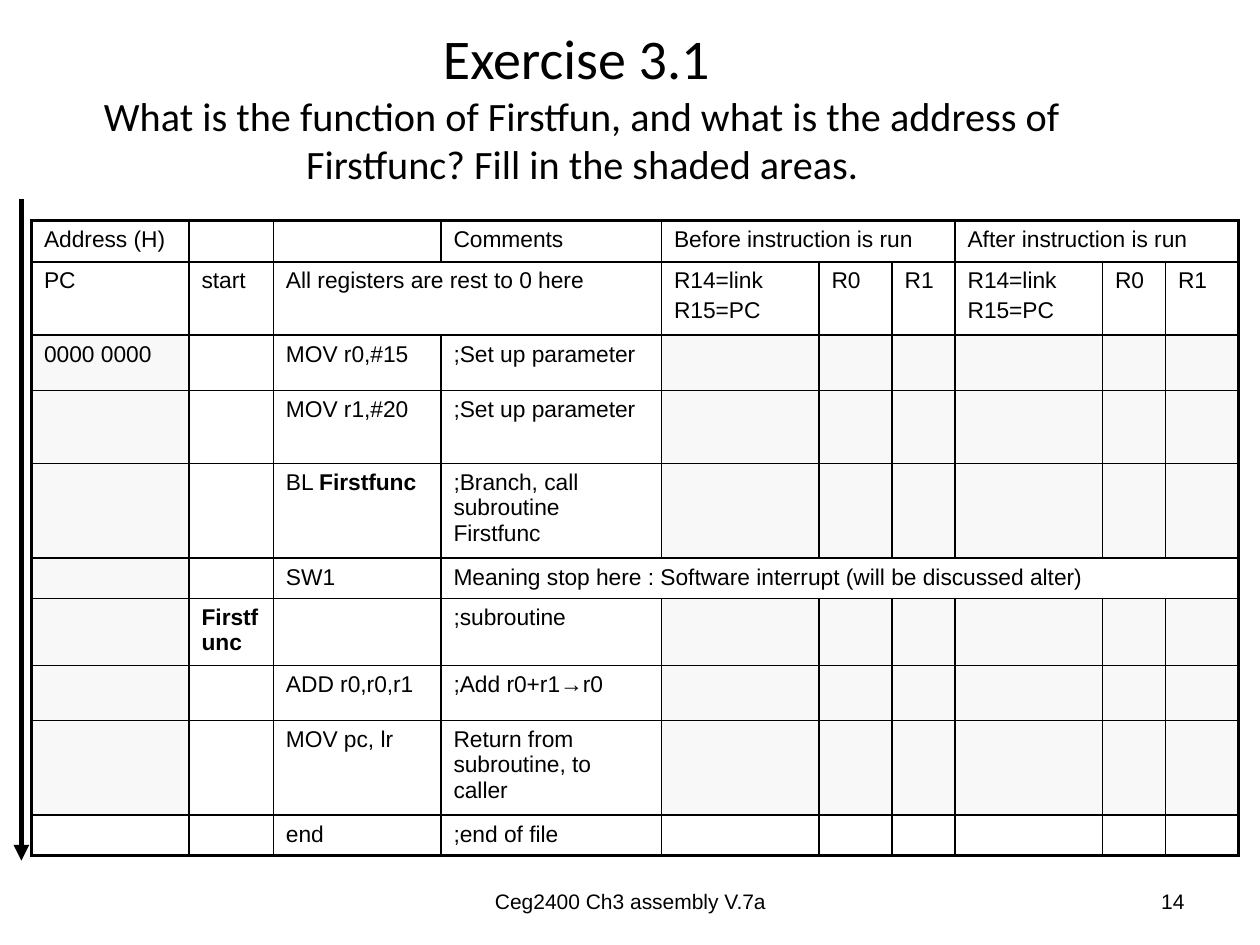
import pptx
import pptx.dml.color
import pptx.enum.shapes
import pptx.enum.text
import pptx.oxml.ns
import pptx.util
from lxml import etree
from pptx.util import Inches

BLACK, WHITE, SHADE = "000000", "FFFFFF", "F8F8F8"
CENTER = pptx.enum.text.PP_ALIGN.CENTER
RIGHT = pptx.enum.text.PP_ALIGN.RIGHT
MIDDLE = pptx.enum.text.MSO_ANCHOR.MIDDLE

COLUMN_WIDTHS = [1.25, 0.67, 1.33, 1.75, 1.25, 0.58, 0.5, 1.17, 0.5, 0.58]
ROW_HEIGHTS = [0.33, 0.58, 0.44, 0.58, 0.75, 0.32, 0.53, 0.44, 0.75, 0.32]
REGISTERS = ["R14=link\nR15=PC", "R0", "R1"]
# Text between ** marks is bold; trailing empty cells are left out.
PROGRAM = [
    ["Address (H)", "", "", "Comments", "Before instruction is run", "", "",
     "After instruction is run"],
    ["PC", "start", "All registers are rest to 0 here", ""] + REGISTERS * 2,
    ["0000 0000", "", "MOV r0,#15", ";Set up parameter"],
    ["", "", "MOV r1,#20", ";Set up parameter"],
    ["", "", "BL **Firstfunc**", ";Branch, call subroutine Firstfunc"],
    ["", "", "SW1",
     "Meaning stop here : Software interrupt (will be discussed alter)"],
    ["", "**Firstfunc**", "", ";subroutine"],
    ["", "", "ADD r0,r0,r1", ";Add r0+r1→r0"],
    ["", "", "MOV pc, lr", "Return from subroutine, to caller"],
    ["", "", "end", ";end of file"],
]
SPANS = {(0, 4): 3, (0, 7): 3, (1, 2): 2, (5, 3): 7}
SHADED_ROWS = range(2, 9)
ANSWER_COLUMNS = [0, 4, 5, 6, 7, 8, 9]


def color(hex_code):
    return pptx.dml.color.RGBColor.from_string(hex_code)


def add_xml(parent, tag, **attributes):
    return etree.SubElement(parent, pptx.oxml.ns.qn(tag), **attributes)


def style_run(run, size, font="Arial", bold=False):
    run.font.size = pptx.util.Pt(size)
    run.font.name = font
    run.font.bold = bold
    run.font.color.rgb = color(BLACK)


def add_title(slide):
    title = slide.shapes.title
    title.left, title.top = Inches(0.5), Inches(0.13)
    title.width, title.height = Inches(8.25), Inches(1.42)
    frame = title.text_frame
    frame.text = ("Exercise 3.1 \vWhat is the function of Firstfun, and what is "
                  "the address of Firstfunc? Fill in the shaded areas.")
    frame.auto_size = pptx.enum.text.MSO_AUTO_SIZE.NONE
    frame.vertical_anchor = MIDDLE
    heading = frame.paragraphs[0]
    heading.alignment = CENTER
    for run, size in zip(heading.runs, (32, 23)):
        style_run(run, size, "Calibri")
    line_break = heading._p.find(pptx.oxml.ns.qn("a:br"))
    add_xml(line_break, "a:rPr", sz="3200")


def set_borders(cell, row, column, span):
    """Draw thin lines inside the table and thick ones around it."""
    outer = {
        "a:lnL": column == 0,
        "a:lnR": column + span == len(COLUMN_WIDTHS),
        "a:lnT": row == 0,
        "a:lnB": row == len(ROW_HEIGHTS) - 1,
    }
    properties = cell._tc.get_or_add_tcPr()
    for tag, is_outer in outer.items():
        width = pptx.util.Pt(2.25 if is_outer else 1)
        line = add_xml(properties, tag, w=str(int(width)))
        add_xml(add_xml(line, "a:solidFill"), "a:srgbClr", val=BLACK)


def set_cell_text(cell, text):
    cell.margin_left = cell.margin_right = Inches(0.1)
    cell.margin_top = cell.margin_bottom = Inches(0.05)
    if not text:
        # Keeps an empty cell from forcing its row taller.
        add_xml(cell.text_frame.paragraphs[0]._p, "a:endParaRPr", sz="1300")
        return
    cell.text_frame.text = text.replace("**", "")
    for index, paragraph in enumerate(cell.text_frame.paragraphs):
        if index:
            paragraph.space_before = pptx.util.Pt(2.6)
        if "**" in text:
            paragraph.clear()
            for part, words in enumerate(text.split("**")):
                if words:
                    run = paragraph.add_run()
                    run.text = words
                    style_run(run, 13, bold=part % 2 == 1)
        else:
            for run in paragraph.runs:
                style_run(run, 13)


def add_program_table(slide):
    table = slide.shapes.add_table(
        len(ROW_HEIGHTS), len(COLUMN_WIDTHS), Inches(0.25), Inches(1.75),
        Inches(sum(COLUMN_WIDTHS)), Inches(sum(ROW_HEIGHTS))).table
    table.first_row = table.horz_banding = False
    for column, width in zip(table.columns, COLUMN_WIDTHS):
        column.width = Inches(width)
    for row, height in zip(table.rows, ROW_HEIGHTS):
        row.height = Inches(height)
    for (row, column), span in SPANS.items():
        table.cell(row, column).merge(table.cell(row, column + span - 1))

    for row, texts in enumerate(PROGRAM):
        for column in range(len(COLUMN_WIDTHS)):
            cell = table.cell(row, column)
            set_borders(cell, row, column, SPANS.get((row, column), 1))
            set_cell_text(cell, texts[column] if column < len(texts) else "")
            if column not in ANSWER_COLUMNS or (row, column) in SPANS and row:
                cell.fill.background()
            else:
                cell.fill.solid()
                shaded = row in SHADED_ROWS and not cell.is_spanned
                cell.fill.fore_color.rgb = color(SHADE if shaded else WHITE)


def add_footer_text(slide, text, left, width, alignment):
    box = slide.shapes.add_textbox(
        Inches(left), Inches(6.95), Inches(width), Inches(0.4))
    frame = box.text_frame
    frame.word_wrap = True
    frame.vertical_anchor = MIDDLE
    frame.text = text
    frame.paragraphs[0].alignment = alignment
    style_run(frame.paragraphs[0].runs[0], 12)


def add_execution_arrow(slide):
    arrow = slide.shapes.add_connector(
        pptx.enum.shapes.MSO_CONNECTOR.STRAIGHT,
        Inches(0.17), Inches(1.58), Inches(0.17), Inches(6.83))
    arrow.line.color.rgb = color(BLACK)
    arrow.line.width = pptx.util.Pt(3)
    add_xml(arrow.line._get_or_add_ln(), "a:tailEnd", type="triangle")
    add_xml(arrow._element.spPr, "a:effectLst")


def main():
    deck = pptx.Presentation()
    deck.slide_width, deck.slide_height = Inches(10), Inches(7.5)
    slide = deck.slides.add_slide(deck.slide_layouts[5])
    add_title(slide)
    add_program_table(slide)
    add_footer_text(slide, "Ceg2400 Ch3 assembly V.7a", 3.42, 3.17, CENTER)
    add_footer_text(slide, "14", 7.17, 2.33, RIGHT)
    add_execution_arrow(slide)
    deck.save("out.pptx")


if __name__ == "__main__":
    main()
